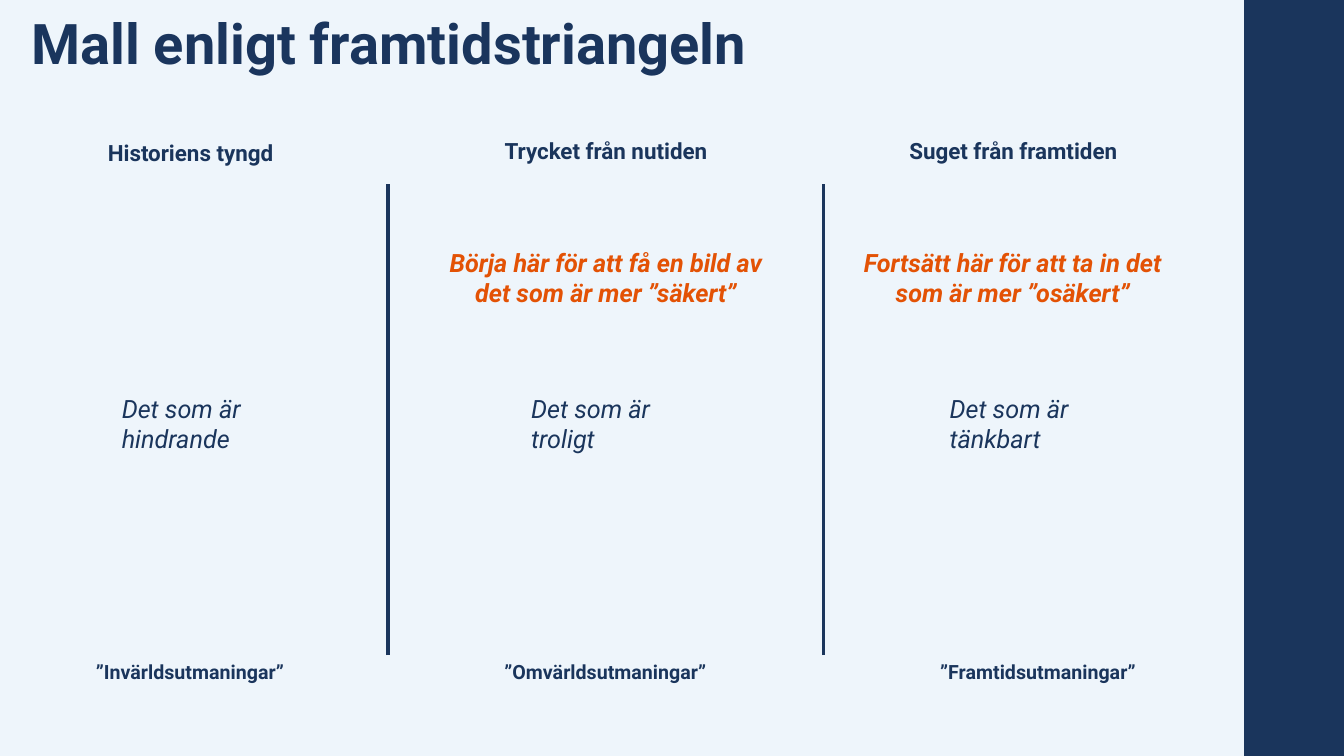
from dataclasses import dataclass

from lxml.etree import SubElement
from pptx import Presentation
from pptx.dml.color import RGBColor
from pptx.enum.shapes import MSO_CONNECTOR, MSO_SHAPE
from pptx.enum.text import MSO_ANCHOR, MSO_AUTO_SIZE, PP_ALIGN
from pptx.oxml.ns import qn
from pptx.slide import Slide
from pptx.text.text import TextFrame
from pptx.util import Emu, Pt

PX = 9144  # one px is a hundredth of an inch
WIDTH, HEIGHT = 1333, 750
NAVY, TITLE_NAVY, ORANGE, PALE = "1A355C", "1A355D", "E35205", "EEF5FB"
FONT = "Roboto"


@dataclass(frozen=True)
class Style:
    size: int
    color: str = NAVY
    bold: bool = False
    italic: bool = False
    align: PP_ALIGN = PP_ALIGN.CENTER


@dataclass(frozen=True)
class Label:
    left: int
    top: int
    width: int
    height: int
    lines: tuple[str, ...]
    style: Style


TITLE = Style(40, TITLE_NAVY, bold=True, align=PP_ALIGN.LEFT)
HEADING = Style(16, bold=True)
HINT = Style(18, ORANGE, bold=True, italic=True)
DESCRIPTION = Style(18, italic=True, align=PP_ALIGN.LEFT)
CHALLENGE = Style(14, bold=True)

LABELS = (
    # Column headings
    Label(95, 133, 188, 37, ("Historiens tyngd",), HEADING),
    Label(385, 131, 432, 37, ("Trycket från nutiden",), HEADING),
    Label(889, 131, 232, 37, ("Suget från framtiden",), HEADING),
    # Where to begin and continue
    Label(436, 240, 330, 71,
          ("Börja här för att få en bild av det som är mer ”säkert”",), HINT),
    Label(846, 240, 317, 71,
          ("Fortsätt här för att ta in det som är mer ”osäkert”",), HINT),
    # What each column holds
    Label(111, 385, 160, 71, ("Det som är", "hindrande"), DESCRIPTION),
    Label(517, 385, 226, 71, ("Det som är", "troligt"), DESCRIPTION),
    Label(932, 385, 187, 71, ("Det som är", "tänkbart"), DESCRIPTION),
    # Challenges
    Label(83, 650, 211, 34, ("”Invärldsutmaningar”",), CHALLENGE),
    Label(487, 650, 227, 34, ("”Omvärldsutmaningar”",), CHALLENGE),
    Label(920, 650, 219, 34, ("”Framtidsutmaningar”",), CHALLENGE),
)
DIVIDERS = (385, 817)


def px(length: int) -> Emu:
    return Emu(length * PX)


def rgb(color: str) -> RGBColor:
    return RGBColor.from_string(color)


def write(frame: TextFrame, lines: tuple[str, ...], style: Style) -> None:
    for index, line in enumerate(lines):
        paragraph = frame.add_paragraph() if index else frame.paragraphs[0]
        paragraph.alignment = style.align
        run = paragraph.add_run()
        run.text = line
        run.font.name = FONT
        run.font.size = Pt(style.size)
        run.font.bold = style.bold
        run.font.italic = style.italic
        run.font.color.rgb = rgb(style.color)


def add_title(slide: Slide, text: str) -> None:
    title = slide.shapes.title
    title.left, title.top, title.width, title.height = map(px, (31, 16, 1047, 60))
    frame = title.text_frame
    frame.margin_left = frame.margin_top = frame.margin_right = frame.margin_bottom = 0
    frame.vertical_anchor = MSO_ANCHOR.TOP
    frame.auto_size = MSO_AUTO_SIZE.NONE
    write(frame, (text,), TITLE)
    frame.paragraphs[0].line_spacing = 0.9


def add_side_band(slide: Slide) -> None:
    band = slide.shapes.add_shape(
        MSO_SHAPE.RECTANGLE, px(1234), px(0), px(WIDTH - 1234), px(HEIGHT))
    band.shadow.inherit = False
    band.fill.solid()
    band.fill.fore_color.rgb = rgb(NAVY)
    band.line.fill.background()


def add_divider(slide: Slide, x: int) -> None:
    divider = slide.shapes.add_connector(
        MSO_CONNECTOR.STRAIGHT, px(x), px(650), px(x), px(183))
    divider.line.color.rgb = rgb(NAVY)
    divider.line.width = Pt(2.5)
    SubElement(divider.element.spPr, qn("a:effectLst"))


def add_label(slide: Slide, label: Label) -> None:
    box = slide.shapes.add_textbox(
        px(label.left), px(label.top), px(label.width), px(label.height))
    box.text_frame.word_wrap = True
    write(box.text_frame, label.lines, label.style)


def main() -> None:
    deck = Presentation()
    deck.slide_width, deck.slide_height = px(WIDTH), px(HEIGHT)
    slide = deck.slides.add_slide(deck.slide_layouts.get_by_name("Title Only"))
    slide.background.fill.solid()
    slide.background.fill.fore_color.rgb = rgb(PALE)

    add_side_band(slide)
    add_title(slide, "Mall enligt framtidstriangeln")
    for x in DIVIDERS:
        add_divider(slide, x)
    for label in LABELS:
        add_label(slide, label)

    deck.save("out.pptx")


if __name__ == "__main__":
    main()
